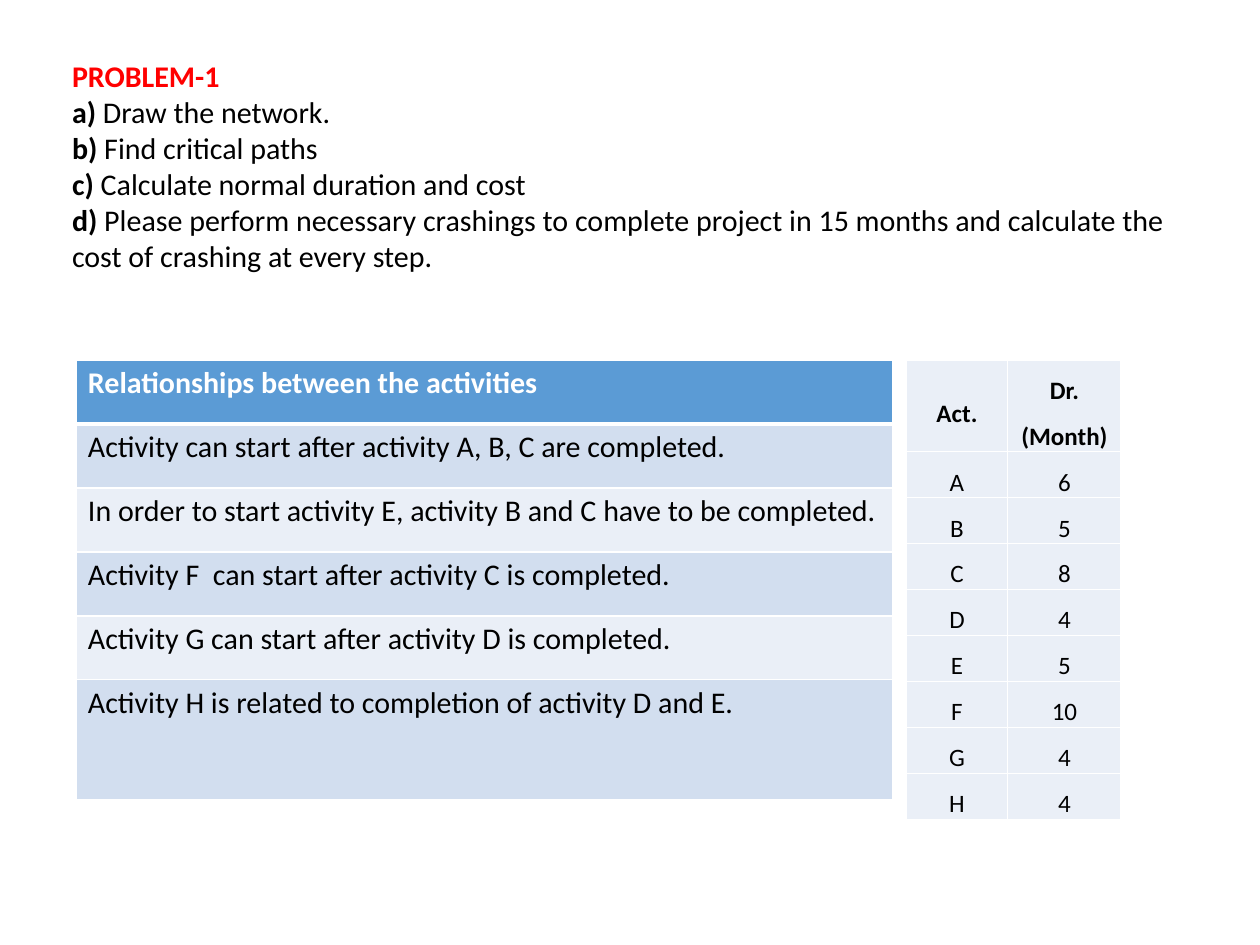
from dataclasses import dataclass

from lxml import etree
from pptx import Presentation
from pptx import util as u
from pptx.dml.color import RGBColor
from pptx.enum import text
from pptx.oxml.ns import qn

PX = 10160  # EMU in one px, 90 px to the inch
BLACK, WHITE, RED = "000000", "FFFFFF", "FF0000"
BLUE, MID, PALE = "5B9BD5", "D2DEEF", "EAEFF7"


@dataclass
class Box:
    left: int
    top: int
    wide: int
    high: int

    def emu(self) -> list[int]:
        return [n * PX for n in (self.left, self.top, self.wide, self.high)]


@dataclass
class Grid:
    box: Box
    cols: list[int]
    rows: list[int]
    cells: list[list[str]]
    head: str  # fill of the first row
    bands: list[str]  # fills of the other rows, in turn
    rule: int  # line under the first row, in points
    pad: tuple[int, int]
    mid: bool
    style: dict  # text format of all cells
    top: dict  # text format of the first row only


def paint(hue: str) -> RGBColor:
    return RGBColor.from_string(hue)


def write(par, words: str, size: int = 24, hue: str = BLACK, bold: bool = False,
          align=text.PP_ALIGN.LEFT, line: float = 1.0, after: int = 0) -> None:
    """Add a run to a paragraph and set the format of both."""
    par.alignment, par.line_spacing = align, line
    par.space_before, par.space_after = u.Pt(0), u.Pt(after)
    run = par.add_run()
    run.text = words
    font = run.font
    font.name, font.size, font.bold = "Calibri", u.Pt(size), bold
    font.color.rgb = paint(hue)


def place(shape, box: Box):
    """Move a placeholder and return its plain, top-anchored text frame."""
    shape.left, shape.top, shape.width, shape.height = box.emu()
    frame = shape.text_frame
    frame.word_wrap = True
    frame.auto_size = text.MSO_AUTO_SIZE.NONE
    frame.vertical_anchor = text.MSO_ANCHOR.TOP
    frame.margin_top = frame.margin_bottom = 0
    return frame


def plain(par) -> None:
    """Take the bullet and the indent off a paragraph."""
    props = par._p.get_or_add_pPr()
    props.set("marL", "0")
    props.set("indent", "0")
    etree.SubElement(props, qn("a:buNone"))


def edge(cell, side: str, width: int) -> None:
    line = etree.SubElement(cell._tc.get_or_add_tcPr(), qn(f"a:ln{side}"),
                            w=str(u.Pt(width)))
    fill = etree.SubElement(line, qn("a:solidFill"))
    etree.SubElement(fill, qn("a:srgbClr"), val=WHITE)


def draw(slide, grid: Grid) -> None:
    table = slide.shapes.add_table(len(grid.rows), len(grid.cols), *grid.box.emu()).table
    for col, wide in zip(table.columns, grid.cols):
        col.width = wide * PX
    for i, (row, high) in enumerate(zip(table.rows, grid.rows)):
        row.height = high * PX
        for cell, words in zip(row.cells, grid.cells[i]):
            for side in "LRTB":
                under = i == 0 and side == "B"
                over = i == 1 and side == "T"
                edge(cell, side, grid.rule if under or over else 1)
            cell.fill.solid()
            hue = grid.bands[(i - 1) % len(grid.bands)] if i else grid.head
            cell.fill.fore_color.rgb = paint(hue)
            cell.margin_left = cell.margin_right = grid.pad[0] * PX
            cell.margin_top = cell.margin_bottom = grid.pad[1] * PX
            cell.vertical_anchor = text.MSO_ANCHOR.MIDDLE if grid.mid else text.MSO_ANCHOR.TOP
            style = grid.style if i else grid.style | grid.top
            write(cell.text_frame.paragraphs[0], words, **style)


TASKS = [
    ("a) ", "Draw the network."),
    ("b) ", "Find critical paths"),
    ("c) ", "Calculate normal duration and cost"),
    ("d) ", "Please perform necessary crashings to complete project in 15 months "
            "and calculate the cost of crashing at every step."),
]

LINKS = Grid(
    Box(76, 360, 817, 440), [817], [64] * 5 + [120],
    [["Relationships between the activities"],
     ["Activity can start after activity A, B, C are completed."],
     ["In order to start activity E, activity B and C have to be completed."],
     ["Activity F  can start after activity C is completed."],
     ["Activity G can start after activity D is completed."],
     ["Activity H is related to completion of activity D and E."]],
    BLUE, [MID, PALE], 3, (12, 5), False, {}, {"hue": WHITE, "bold": True})

TIMES = Grid(
    Box(906, 360, 215, 396), [102, 113], [44] * 9,
    [["Act.", "Dr. (Month)"]]
    + [[act, str(n)] for act, n in zip("ABCDEFGH", (6, 5, 8, 4, 5, 10, 4, 4))],
    PALE, [PALE], 1, (12, 0), True,
    {"size": 20, "align": text.PP_ALIGN.CENTER, "line": 1.5, "after": 10},
    {"bold": True})


def main() -> None:
    deck = Presentation()
    deck.slide_width, deck.slide_height = 1260 * PX, 945 * PX
    slide = deck.slides.add_slide(deck.slide_layouts[1])

    # Title
    frame = place(slide.shapes.title, Box(63, 57, 1161, 36))
    write(frame.paragraphs[0], "PROBLEM-1", hue=RED, bold=True)

    # Tasks
    frame = place(slide.placeholders[1], Box(63, 93, 1161, 295))
    for i, (mark, words) in enumerate(TASKS):
        par = frame.add_paragraph() if i else frame.paragraphs[0]
        plain(par)
        write(par, mark, bold=True)
        write(par, words)

    # Tables
    for grid in (LINKS, TIMES):
        draw(slide, grid)

    deck.save("out.pptx")


if __name__ == "__main__":
    main()
